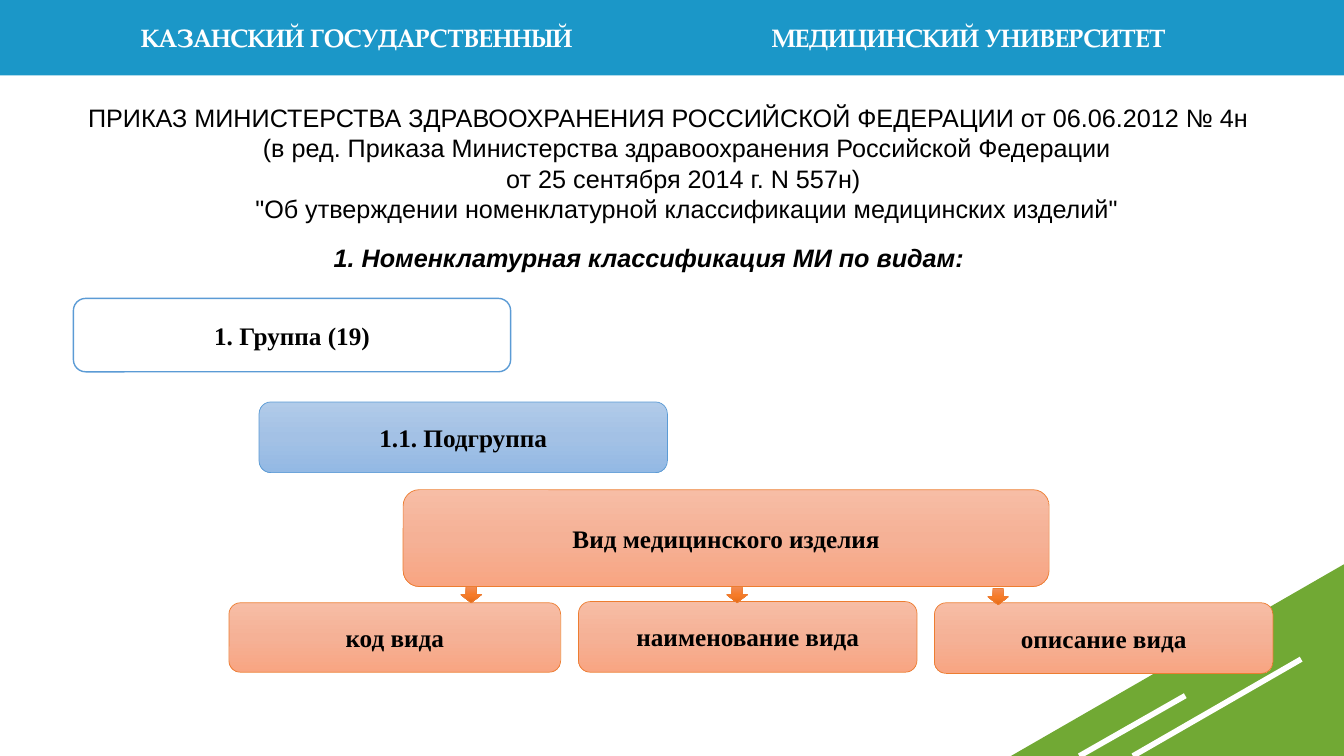
"""Build the slide on the classification of medical devices by kind."""
import copy
import pptx
import pptx.util
import pptx.dml.color
import pptx.enum.shapes
import pptx.enum.text
import pptx.oxml

Cm, Pt = pptx.util.Cm, pptx.util.Pt
KIND = pptx.enum.shapes.MSO_SHAPE
SIDE = pptx.enum.text.PP_ALIGN
WIDE, HIGH = 33.87, 19.05
SERIF, HEAD, SANS = "Times New Roman", "TeX Gyre Pagella", "Arial"

PEACH = ["F7BDA5", "F5B196", "F8A582"]
BLUE = ["B1CBE9", "A3C1E5", "93B9E4"]
AMBER = ["F18C57", "F67B28", "E56C19"]

STRIPES = [(27.2, 29.87, 17.53), (28.55, 32.79, 16.61)]
HEADS = [
    ("КАЗАНСКИЙ ГОСУДАРСТВЕННЫЙ", 2.34, SIDE.RIGHT),
    ("МЕДИЦИНСКИЙ УНИВЕРСИТЕТ", 19.2, SIDE.LEFT),
]
ORDER = "\v".join([
    "ПРИКАЗ МИНИСТЕРСТВА ЗДРАВООХРАНЕНИЯ РОССИЙСКОЙ ФЕДЕРАЦИИ от 06.06.2012 № 4н ",
    "(в ред. Приказа Министерства здравоохранения Российской Федерации",
    "от 25 сентября 2014 г. N 557н) ",
    "\"Об утверждении номенклатурной классификации медицинских изделий\"",
])
TITLE = "1. Номенклатурная классификация МИ по видам:"
BOXES = [
    ("наименование вида", (14.58, 15.16, 8.53, 1.78), PEACH, "ED7D31", 0.5),
    ("код вида", (5.77, 15.19, 8.36, 1.75), PEACH, "ED7D31", 0.5),
    ("1. Группа (19)", (1.85, 7.52, 11.02, 1.85), ["FFFFFF"], "5B9BD5", 1),
    ("1.1. Подгруппа", (6.53, 10.13, 10.29, 1.78), BLUE, "5B9BD5", 0.5),
    ("Вид медицинского изделия", (10.16, 12.34, 16.28, 2.44), PEACH, "ED7D31", 0.5),
    ("описание вида", (23.55, 15.19, 8.53, 1.78), PEACH, "ED7D31", 0.5),
]
ARROWS = [(11.61, 14.78), (18.31, 14.78), (24.89, 14.83)]


def tint(target, code):
    target.rgb = pptx.dml.color.RGBColor.from_string(code)


def paint(shape, tones):
    fill = shape.fill
    if len(tones) == 1:
        fill.solid()
        tint(fill.fore_color, tones[0])
        return
    fill.gradient()
    fill.gradient_angle = 270
    first = shape._element.spPr.find(".//" + pptx.oxml.ns.qn("a:gs"))
    mid = copy.deepcopy(first)
    mid.set("pos", "50000")
    first.addnext(mid)
    for stop, tone in zip(fill.gradient_stops, tones):
        tint(stop.color, tone)


def draw(kind, place, tones, edge=None, width=0.5):
    shape = slide.shapes.add_shape(kind, *map(Cm, place))
    shape.shadow.inherit = False
    paint(shape, tones)
    if edge:
        tint(shape.line.color, edge)
        shape.line.width = Pt(width)
    else:
        shape.line.fill.background()
    return shape


def write(shape, text, face, color="000000", side=SIDE.CENTER, bold=False, slant=False):
    frame = shape.text_frame
    frame.word_wrap = True
    frame.text = text
    para = frame.paragraphs[0]
    para.alignment = side
    for run in para.runs:
        font = run.font
        font.size, font.name = Pt(18), face
        font.bold, font.italic = bold, slant
        tint(font.color, color)
    return para


def label(place, *args, **style):
    return write(slide.shapes.add_textbox(*map(Cm, place)), *args, **style)


deck = pptx.Presentation()
deck.slide_width, deck.slide_height = Cm(WIDE), Cm(HIGH)
slide = deck.slides.add_slide(deck.slide_layouts[6])

draw(KIND.RECTANGLE, (0, 0, WIDE, 1.9), ["1B97C8"])
corner = draw(KIND.RIGHT_TRIANGLE, (25.48, 14.22, 8.39, 4.83), ["71A934"])
corner._element.spPr.xfrm.set("flipH", "1")

for left, right, top in STRIPES:
    stripe = slide.shapes.add_connector(
        pptx.enum.shapes.MSO_CONNECTOR.STRAIGHT, Cm(left), Cm(HIGH), Cm(right), Cm(top))
    tint(stripe.line.color, "FFFFFF")
    stripe.line.width = Pt(4)
    stripe._element.spPr.append(pptx.oxml.xmlchemy.OxmlElement("a:effectLst"))

for text, left, side in HEADS:
    label((left, 0.43, 12.34, 1.02), text, HEAD, color="FFFFFF", side=side, bold=True)

order = label((0.66, 2.46, 32.54, 2.92), ORDER, SANS)
props = order._p.get_or_add_pPr()
props.set("marL", str(Cm(0.76)))
props.set("indent", str(-Cm(0.76)))

for text, place, tones, edge, width in BOXES:
    box = draw(KIND.ROUNDED_RECTANGLE, place, tones, edge, width)
    box.text_frame.vertical_anchor = pptx.enum.text.MSO_ANCHOR.MIDDLE
    write(box, text, SERIF, bold=True)

for left, top in ARROWS:
    draw(KIND.DOWN_ARROW, (left, top, 0.53, 0.41), AMBER, "ED7D31")

title = label((2.26, 6.12, 28.19, 0.86), TITLE, SANS, bold=True, slant=True)
title.line_spacing = 0.8

deck.save("out.pptx")
